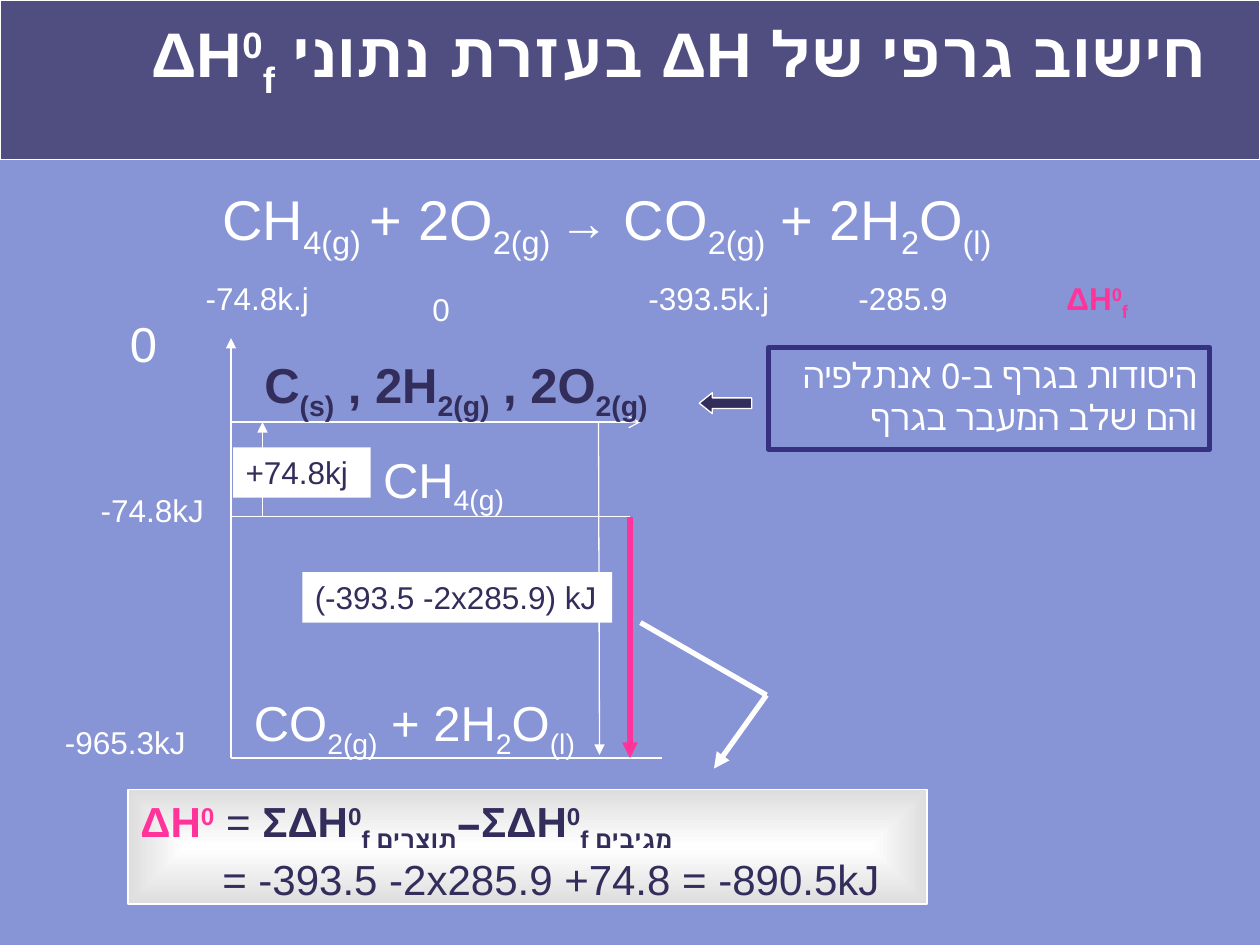
from lxml.etree import SubElement
from pptx import Presentation
from pptx.dml.color import RGBColor
from pptx.enum.shapes import MSO_CONNECTOR as Connector, MSO_SHAPE as Shape
from pptx.enum.text import MSO_ANCHOR as Anchor, PP_ALIGN as Align
from pptx.oxml.ns import qn
from pptx.util import Inches, Pt

WHITE = RGBColor(0xFF, 0xFF, 0xFF)
SKY = RGBColor(0x87, 0x94, 0xD5)
BAR = RGBColor(0x50, 0x4D, 0x80)
NAVY = RGBColor(0x32, 0x2D, 0x5A)
INDIGO = RGBColor(0x36, 0x30, 0x80)
PINK = RGBColor(0xFF, 0x33, 0x99)
SILVER = RGBColor(0xDD, 0xDD, 0xDD)
SUB, SUP = -25000, 30000


def grid(*counts):
    """Turn grid steps, twelve to the inch, into lengths."""
    return [Inches(count / 12) for count in counts]


def sub(text):
    return text, SUB


def sup(text):
    return text, SUP


def write(para, parts, size, color=WHITE, bold=False):
    for part in parts:
        text, baseline = part if isinstance(part, tuple) else (part, 0)
        span = para.add_run()
        span.text = text
        span.font.name = "Arial"
        span.font.size = Pt(size)
        span.font.bold = bold
        span.font.color.rgb = color
        if baseline:
            span.font._element.set("baseline", str(baseline))


def set_rtl(para):
    para.alignment = Align.RIGHT
    para._p.get_or_add_pPr().set("rtl", "1")


def add_label(page, left, top, width, height, parts, size,
              color=WHITE, bold=False, align=Align.LEFT):
    box = page.shapes.add_textbox(*grid(left, top, width, height))
    box.text_frame.word_wrap = True
    para = box.text_frame.paragraphs[0]
    para.alignment = align
    write(para, parts, size, color, bold)


def add_box(page, left, top, width, height, fill=None, line=None,
            weight=0.75, kind=Shape.RECTANGLE):
    box = page.shapes.add_shape(kind, *grid(left, top, width, height))
    box.shadow.inherit = False
    if fill is None:
        box.fill.background()
    else:
        box.fill.solid()
        box.fill.fore_color.rgb = fill
    if line is None:
        box.line.fill.background()
    else:
        box.line.color.rgb = line
        box.line.width = Pt(weight)
    box.text_frame.word_wrap = True
    box.text_frame.vertical_anchor = Anchor.TOP
    box.text_frame.paragraphs[0].alignment = Align.LEFT
    return box


def add_line(page, start, end, color=WHITE, weight=0.75, head=None):
    line = page.shapes.add_connector(Connector.STRAIGHT, *grid(*start, *end))
    line.line.color.rgb = color
    line.line.width = Pt(weight)
    if head:
        SubElement(line.line._get_or_add_ln(), qn("a:tailEnd"), type=head)
    SubElement(line._element.spPr, qn("a:effectLst"))


def add_title(page):
    bar = add_box(page, 0, 0, 120, 15.2, BAR, WHITE)
    page.shapes._spTree.insert(2, bar._element)  # behind the title
    title = page.shapes.title
    title.left, title.top, title.width, title.height = grid(9, -2, 107, 15)
    title.text_frame.vertical_anchor = Anchor.MIDDLE
    para = title.text_frame.paragraphs[0]
    set_rtl(para)
    write(para, ["חישוב גרפי של ΔH בעזרת נתוני ΔH", sup("0"), sub("f")],
          36, bold=True)


def add_equation(page, left, top):
    add_label(page, left + 4, top, 96, 7.5,
              ["CH", sub("4(g) "), "+ 2O", sub("2(g) ")], 32)
    para = page.shapes[-1].text_frame.paragraphs[0]
    write(para, ["→"], 28)
    write(para, [" CO", sub("2(g)"), " + 2H", sub("2"), "O", sub("(l)")], 32)
    # Formation enthalpy below each substance
    for x, y, width, value in [(0, 9, 17, "-74.8k.j"), (21, 10, 10, "0"),
                               (42, 9, 19, "-393.5k.j"),
                               (63, 9, 14, "-285.9")]:
        add_label(page, left + x, top + y, width, 6, [value], 18,
                  align=Align.CENTER)
    add_label(page, left + 81, top + 9, 15, 4.8,
              ["ΔH", sup("0"), sub("f")], 18, PINK, True, Align.CENTER)


def add_diagram(page, left, top):
    """Enthalpy levels, with the foot of the arrowed axis at row 40."""
    zero, methane, products = 8, 17, 40

    # Axis, levels and steps
    for x1, y1, x2, y2, color, weight, head in [
            (0, products, 0, 0, WHITE, 0.75, "triangle"),
            (0, zero, 39, zero, WHITE, 0.75, "arrow"),
            (0, methane, 38, methane, WHITE, 0.75, None),
            (0, products, 41, products, WHITE, 0.75, None),
            (3, methane, 3, zero, WHITE, 0.75, "triangle"),
            (35, zero, 35.1, products - 0.3, WHITE, 0.75, "triangle"),
            (38, methane, 38, products, PINK, 3, "triangle")]:
        add_line(page, (left + x1, top + y1), (left + x2, top + y2),
                 color, weight, head)

    # Substances on their levels
    for x, y, width, parts, color, bold in [
            (2, 1, 42, ["C", sub("(s)"), " , 2H", sub("2(g)"),
                        " , 2O", sub("2(g)")], NAVY, True),
            (13.3, 10, 20, ["CH", sub("4(g)")], WHITE, False),
            (1, 33.2, 42, ["CO", sub("2(g)"), " + 2H", sub("2"), "O",
                           sub("(l)")], WHITE, False)]:
        add_label(page, left + x, top + y, width, 6.8, parts, 28,
                  color, bold)

    # Values beside the axis
    add_label(page, left - 10.8, top - 2.9, 6, 6.8, ["0"], 28)
    add_label(page, left - 16, top + 14, 17, 4.8, ["-74.8kJ"], 18,
              align=Align.CENTER)
    add_label(page, left - 17, top + 36.1, 22, 4.8, ["-965.3kJ"], 18)

    # Values of the steps
    for x, y, width, value in [(0.2, 10.4, 13.1, "+74.8kj"),
                               (6.8, 22.3, 29.5, "(-393.5 -2x285.9) kJ")]:
        box = add_box(page, left + x, top + y, width, 4.8, WHITE)
        box.text_frame.word_wrap = False
        write(box.text_frame.paragraphs[0], [value], 18, NAVY)


def add_note(page, left, top):
    box = add_box(page, left, top, 42, 9.7, line=INDIGO, weight=3)
    para = box.text_frame.paragraphs[0]
    set_rtl(para)
    write(para, ["היסודות בגרף ב-0 אנתלפיה והם שלב המעבר בגרף"], 20)
    arrow = add_box(page, left - 6.6, top + 4.3, 5, 2, NAVY, WHITE,
                    kind=Shape.LEFT_ARROW)
    arrow.adjustments[1] = 0.625


def add_result(page, left, top):
    box = add_box(page, left, top, 76.1, 10.9, WHITE, WHITE)
    # Gradient from a white centre to grey edges
    box.fill.gradient()
    for stop, color in zip(box.fill.gradient_stops, (WHITE, SILVER)):
        stop.color.rgb = color
    gradient = box._element.spPr.find(qn("a:gradFill"))
    gradient.remove(gradient.find(qn("a:lin")))
    shade = SubElement(gradient, qn("a:path"))
    shade.set("path", "shape")
    SubElement(shade, qn("a:fillToRect"),
               {side: "50000" for side in "ltrb"})

    first = box.text_frame.paragraphs[0]
    write(first, ["ΔH", sup("0")], 24, PINK, True)
    write(first, [" = "], 24, NAVY)
    write(first, ["ΣΔΗ", sup("0"), sub("f תוצרים"),
                  "−ΣΔΗ", sup("0"), sub("f מגיבים")], 24, NAVY, True)
    second = box.text_frame.add_paragraph()
    second.alignment = Align.LEFT
    second._p.get_or_add_pPr().set("marL", str(Inches(0.65)))
    write(second, ["= -393.5 -2x285.9 +74.8 = -890.5kJ"], 24, NAVY)

    # Bent pointer from the diagram to the result
    start, bend, end = ((left + x, top + y) for x, y in
                        [(48.8, -15.9), (60.8, -9), (55.8, -2)])
    add_line(page, start, bend, weight=3)
    add_line(page, bend, end, weight=3, head="triangle")


def main():
    deck = Presentation()
    deck.slide_width, deck.slide_height = grid(120, 90)
    page = deck.slides.add_slide(deck.slide_layouts[5])
    page.background.fill.solid()
    page.background.fill.fore_color.rgb = SKY
    add_title(page)
    add_equation(page, 16, 17)
    add_diagram(page, 22, 32.2)
    add_note(page, 73.2, 33.1)
    add_result(page, 12.2, 75.2)
    deck.save("out.pptx")


if __name__ == "__main__":
    main()
